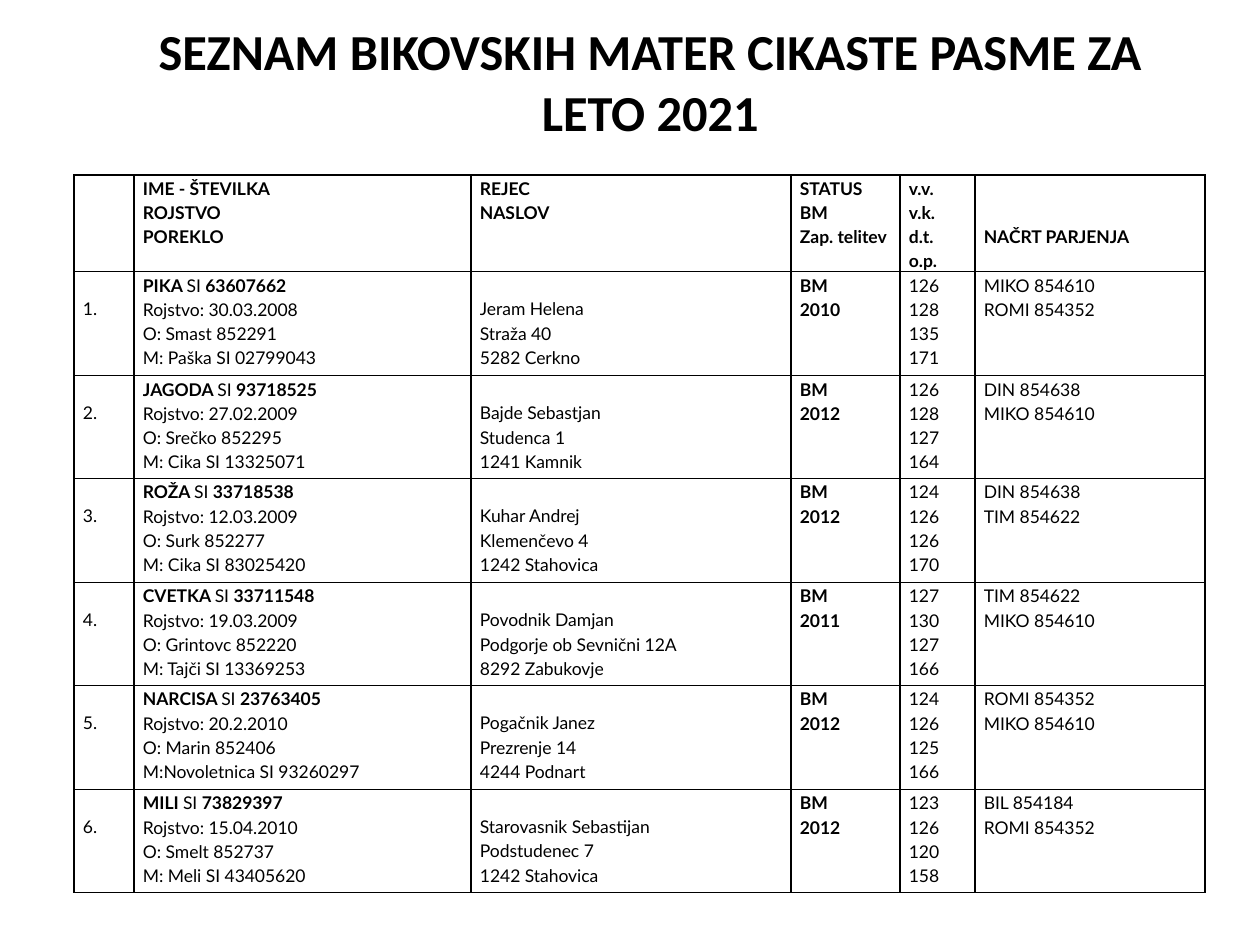
from dataclasses import dataclass

from lxml import etree
from pptx import Presentation
from pptx.dml.color import RGBColor
from pptx.enum.text import MSO_ANCHOR, PP_ALIGN
from pptx.oxml.ns import qn
from pptx.util import Emu, Pt

CENTER, JUSTIFY = PP_ALIGN.CENTER, PP_ALIGN.JUSTIFY
MIDDLE = MSO_ANCHOR.MIDDLE
SCALE = 914400 // 126
LINE = 24
INSET = 9
WIDTHS = [60, 337, 320, 109, 75, 230]
HEIGHTS = [83] + [104, 103] * 3


@dataclass(frozen=True)
class Theme:
    """Hold the colours, fonts and type sizes."""

    ink: str = "000000"
    head: str = "Calibri"
    body: str = "Lato"
    big: float = 28.8
    small: float = 10
    rule: float = 1
    lead: float = 1.15


THEME = Theme()

TITLE = "SEZNAM BIKOVSKIH MATER CIKASTE PASME ZA LETO 2021"
HEADS = [
    ([], 0),
    (["IME - ŠTEVILKA", "ROJSTVO", "POREKLO"], 0),
    (["REJEC", "NASLOV"], 0),
    (["STATUS", "BM", "Zap. telitev"], 0),
    (["v.v.", "v.k.", "d.t.", "o.p."], 0),
    (["NAČRT PARJENJA"], 2),
]
COWS = [
    ("PIKA", "63607662",
     ["Rojstvo: 30.03.2008", "O: Smast 852291", "M: Paška SI 02799043"],
     ["Jeram Helena", "Straža 40", "5282 Cerkno"],
     "2010", "126 128 135 171", ["MIKO 854610", "ROMI 854352"]),
    ("JAGODA", "93718525",
     ["Rojstvo: 27.02.2009", "O: Srečko 852295", "M: Cika SI 13325071"],
     ["Bajde Sebastjan", "Studenca 1", "1241 Kamnik"],
     "2012", "126 128 127 164", ["DIN 854638", "MIKO 854610"]),
    ("ROŽA", "33718538",
     ["Rojstvo: 12.03.2009", "O: Surk 852277", "M: Cika SI 83025420"],
     ["Kuhar Andrej", "Klemenčevo 4", "1242 Stahovica"],
     "2012", "124 126 126 170", ["DIN 854638", "TIM 854622"]),
    ("CVETKA", "33711548",
     ["Rojstvo: 19.03.2009", "O: Grintovc 852220", "M: Tajči SI 13369253"],
     ["Povodnik Damjan", "Podgorje ob Sevnični 12A", "8292 Zabukovje"],
     "2011", "127 130 127 166", ["TIM 854622", "MIKO 854610"]),
    ("NARCISA", "23763405",
     ["Rojstvo: 20.2.2010", "O: Marin 852406", "M:Novoletnica SI 93260297"],
     ["Pogačnik Janez", "Prezrenje 14", "4244 Podnart"],
     "2012", "124 126 125 166", ["ROMI 854352", "MIKO 854610"]),
    ("MILI", "73829397",
     ["Rojstvo: 15.04.2010", "O: Smelt 852737", "M: Meli SI 43405620"],
     ["Starovasnik Sebastijan", "Podstudenec 7", "1242 Stahovica"],
     "2012", "123 126 120 158", ["BIL 854184", "ROMI 854352"]),
]


def px(count):
    """Turn whole pixels into EMU."""
    return Emu(count * SCALE)


def style(font, name, size, bold):
    """Set the face, size, weight and colour of a font."""
    font.name, font.size, font.bold = name, Pt(size), bold
    font.color.rgb = RGBColor.from_string(THEME.ink)


def add_title(slide, text, left, top, width, height):
    """Add the centred heading."""
    frame = slide.shapes.add_textbox(px(left), px(top), px(width), px(height)).text_frame
    frame.word_wrap = True
    frame.vertical_anchor = MIDDLE
    frame.margin_top = frame.margin_bottom = 0
    para = frame.paragraphs[0]
    para.text = text
    para.alignment = CENTER
    style(para.font, THEME.head, THEME.big, True)


def add_edges(cell):
    """Draw a thin rule on all four sides of a cell."""
    props = cell._tc.get_or_add_tcPr()
    for spot, side in enumerate("LRTB"):
        edge = etree.Element(qn(f"a:ln{side}"), w=str(Pt(THEME.rule)))
        fill = etree.SubElement(edge, qn("a:solidFill"))
        etree.SubElement(fill, qn("a:srgbClr"), val=THEME.ink)
        props.insert(spot, edge)


def fill_cell(cell, lines, skip=0, bold=False):
    """Write lines into a cell, starting a number of lines down."""
    cell.fill.background()
    cell.margin_left = cell.margin_right = px(INSET)
    cell.margin_top, cell.margin_bottom = px(skip * LINE), 0
    add_edges(cell)
    frame = cell.text_frame
    for spot, line in enumerate(lines):
        para = frame.add_paragraph() if spot else frame.paragraphs[0]
        para.alignment, para.line_spacing = JUSTIFY, THEME.lead
        style(para.font, THEME.body, THEME.small, bold)
        if isinstance(line, str):
            para.text = line
            continue
        for text, heavy in line:
            run = para.add_run()
            run.text, run.font.bold = text, heavy


def cow_cells(rank, cow):
    """Give the lines, skip and weight of each cell for one cow."""
    name, code, birth, owner, year, marks, mates = cow
    label = [(f"{name} ", True), ("SI ", False), (code, True)]
    return [
        ([f"{rank}."], 1, False),
        ([label, *birth], 0, False),
        (owner, 1, False),
        (["BM", year], 0, True),
        (marks.split(), 0, False),
        (mates, 0, False),
    ]


def add_list(slide, left, top):
    """Add the table of cows."""
    table = slide.shapes.add_table(
        len(HEIGHTS), len(WIDTHS), px(left), px(top), px(sum(WIDTHS)), px(sum(HEIGHTS))
    ).table
    table.first_row = table.horz_banding = False
    for col, width in zip(table.columns, WIDTHS):
        col.width = px(width)
    rows = [[(*head, True) for head in HEADS]]
    rows += [cow_cells(rank, cow) for rank, cow in enumerate(COWS, 1)]
    for row, height, cells in zip(table.rows, HEIGHTS, rows):
        row.height = px(height)
        for cell, (lines, skip, bold) in zip(row.cells, cells):
            fill_cell(cell, lines, skip, bold)


def main():
    """Build the slide and save it."""
    deck = Presentation()
    deck.slide_width, deck.slide_height = px(1260), px(945)
    slide = deck.slides.add_slide(deck.slide_layouts[6])
    add_title(slide, TITLE, 115, 16, 1071, 130)
    add_list(slide, 74, 175)
    deck.save("out.pptx")


if __name__ == "__main__":
    main()
